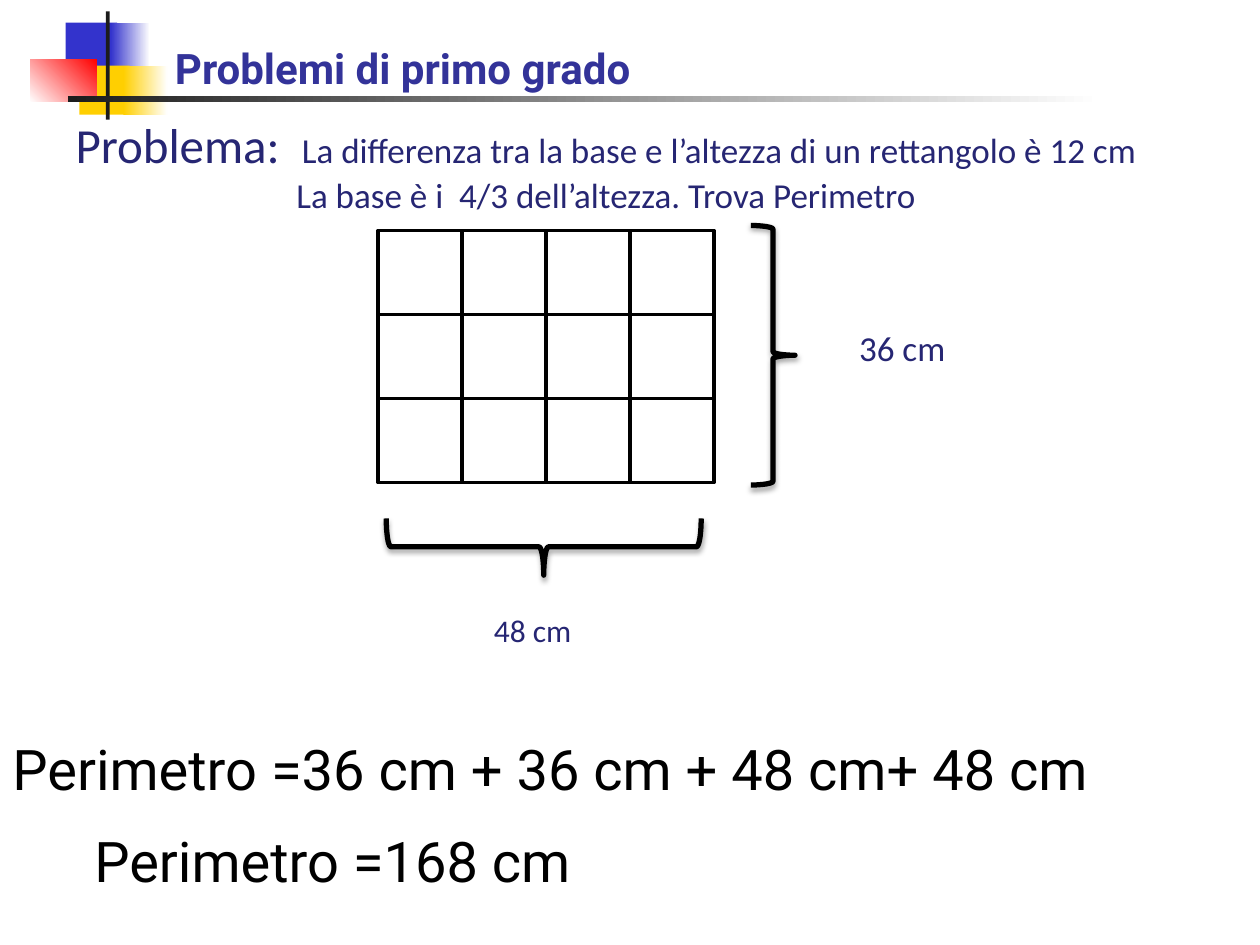
from dataclasses import dataclass

from lxml.etree import SubElement
from pptx import Presentation
from pptx.dml.color import RGBColor
from pptx.enum.shapes import MSO_SHAPE
from pptx.enum.text import PP_ALIGN
from pptx.oxml.ns import qn
from pptx.util import Inches, Pt


@dataclass(frozen=True)
class Theme:
    black: str = "000000"
    white: str = "FFFFFF"
    title: str = "333399"
    body: str = "262673"
    blue: str = "3333CC"
    yellow: str = "FFCF01"
    red: str = "FF0000"
    dark: str = "1C1C1C"
    heading_font: str = "Roboto"
    body_font: str = "Calibri"
    result_size: int = 32
    lead_size: int = 28
    title_size: int = 24
    body_size: int = 20
    label_size: int = 18


THEME = Theme()
COLUMNS, ROWS = 4, 3
CELL = 2 / 3
GRID_LEFT, GRID_TOP = 3, 1.83


def rgb(color):
    return RGBColor.from_string(color)


def add_text(slide, box, paragraphs, size=THEME.body_size, font=THEME.body_font,
             color=THEME.body, bold=False, align=PP_ALIGN.LEFT, indent=0.1):
    """Each paragraph is a list of (text, size) runs; size None means the default."""
    tf = slide.shapes.add_textbox(*map(Inches, box)).text_frame
    tf.word_wrap = True
    tf.margin_left = Inches(indent)
    for i, runs in enumerate(paragraphs):
        p = tf.paragraphs[0] if i == 0 else tf.add_paragraph()
        p.alignment = align
        for text, run_size in runs:
            r = p.add_run()
            r.text = text
            r.font.size = Pt(run_size or size)
            r.font.name = font
            r.font.bold = bold
            r.font.color.rgb = rgb(color)


def add_block(shapes, box, start, end=None, angle=0):
    """Borderless rectangle, solid or fading from start to end."""
    s = shapes.add_shape(MSO_SHAPE.RECTANGLE, *map(Inches, box))
    s.shadow.inherit = False
    s.line.fill.background()
    if end is None:
        s.fill.solid()
        s.fill.fore_color.rgb = rgb(start)
        return
    s.fill.gradient()
    s.fill.gradient_angle = angle
    for stop, color, position in zip(s.fill.gradient_stops, (start, end), (0, 1)):
        stop.color.rgb = rgb(color)
        stop.position = position


def add_brace(slide, box, rotation=0):
    s = slide.shapes.add_shape(MSO_SHAPE.RIGHT_BRACE, *map(Inches, box))
    s.rotation = rotation
    s.fill.background()
    s.line.color.rgb = rgb(THEME.black)
    s.line.width = Pt(3)
    s.shadow.inherit = False
    effects = s._element.spPr.find(qn("a:effectLst"))
    shadow = SubElement(effects, qn("a:outerShdw"), blurRad=str(Pt(3.1)),
                        dist=str(Pt(1.8)), dir="5400000", rotWithShape="0")
    color = SubElement(shadow, qn("a:srgbClr"), val=THEME.black)
    SubElement(color, qn("a:alpha"), val="35000")


def add_grid(slide):
    for row in range(ROWS):
        for col in range(COLUMNS):
            box = (GRID_LEFT + col * CELL, GRID_TOP + row * CELL, CELL, CELL)
            s = slide.shapes.add_shape(MSO_SHAPE.RECTANGLE, *map(Inches, box))
            s.shadow.inherit = False
            s.fill.solid()
            s.fill.fore_color.rgb = rgb(THEME.white)
            s.line.color.rgb = rgb(THEME.black)
            s.line.width = Pt(2)


def add_header_ornament(slide):
    shapes = slide.shapes.add_group_shape().shapes
    add_block(shapes, (0.52, 0.18, 0.41, 0.39), THEME.blue)
    add_block(shapes, (0.88, 0.18, 0.31, 0.39), THEME.blue, THEME.white)
    add_block(shapes, (0.63, 0.52, 0.4, 0.39), THEME.yellow)
    add_block(shapes, (0.98, 0.52, 0.35, 0.39), THEME.yellow, THEME.white)
    add_block(shapes, (0.24, 0.47, 0.53, 0.34), THEME.white, THEME.red, angle=45)
    add_block(shapes, (0.84, 0.09, 0.03, 0.86), THEME.dark)
    add_block(shapes, (0.54, 0.76, 8.2, 0.05), THEME.dark, THEME.white)


def main():
    prs = Presentation()
    prs.slide_width, prs.slide_height = Inches(10), Inches(7.5)
    slide = prs.slides.add_slide(prs.slide_layouts[6])

    add_header_ornament(slide)
    add_text(slide, (1.29, 0.29, 6.84, 0.91), [[("Problemi di primo grado", None)]],
             size=THEME.title_size, font=THEME.heading_font, color=THEME.title, bold=True)

    add_text(slide, (0.1, 0.86, 9.42, 1.25), [
        [("Problema:  ", THEME.lead_size),
         ("La differenza tra la base e l’altezza di un rettangolo è 12 cm", None)],
        [("La base è i  4/3 dell’altezza. Trova Perimetro", None)],
    ], align=PP_ALIGN.CENTER)

    add_grid(slide)
    add_brace(slide, (5.96, 1.79, 0.35, 2.06))
    add_text(slide, (6.72, 2.54, 2.28, 0.44), [[("36 cm", None)]])
    add_brace(slide, (4.09, 3.09, 0.45, 2.5), rotation=90)
    add_text(slide, (3.65, 4.8, 1.93, 0.4), [[("48 cm", None)]],
             size=THEME.label_size, indent=0.27)

    results = [(0, 5.78, "Perimetro =36 cm + 36 cm + 48 cm+ 48 cm"),
               (0.65, 6.51, "Perimetro =168 cm")]
    for left, top, text in results:
        add_text(slide, (left, top, 9.35, 0.64), [[(text, None)]],
                 size=THEME.result_size, font=THEME.heading_font, color=THEME.black)

    prs.save("out.pptx")


if __name__ == "__main__":
    main()
